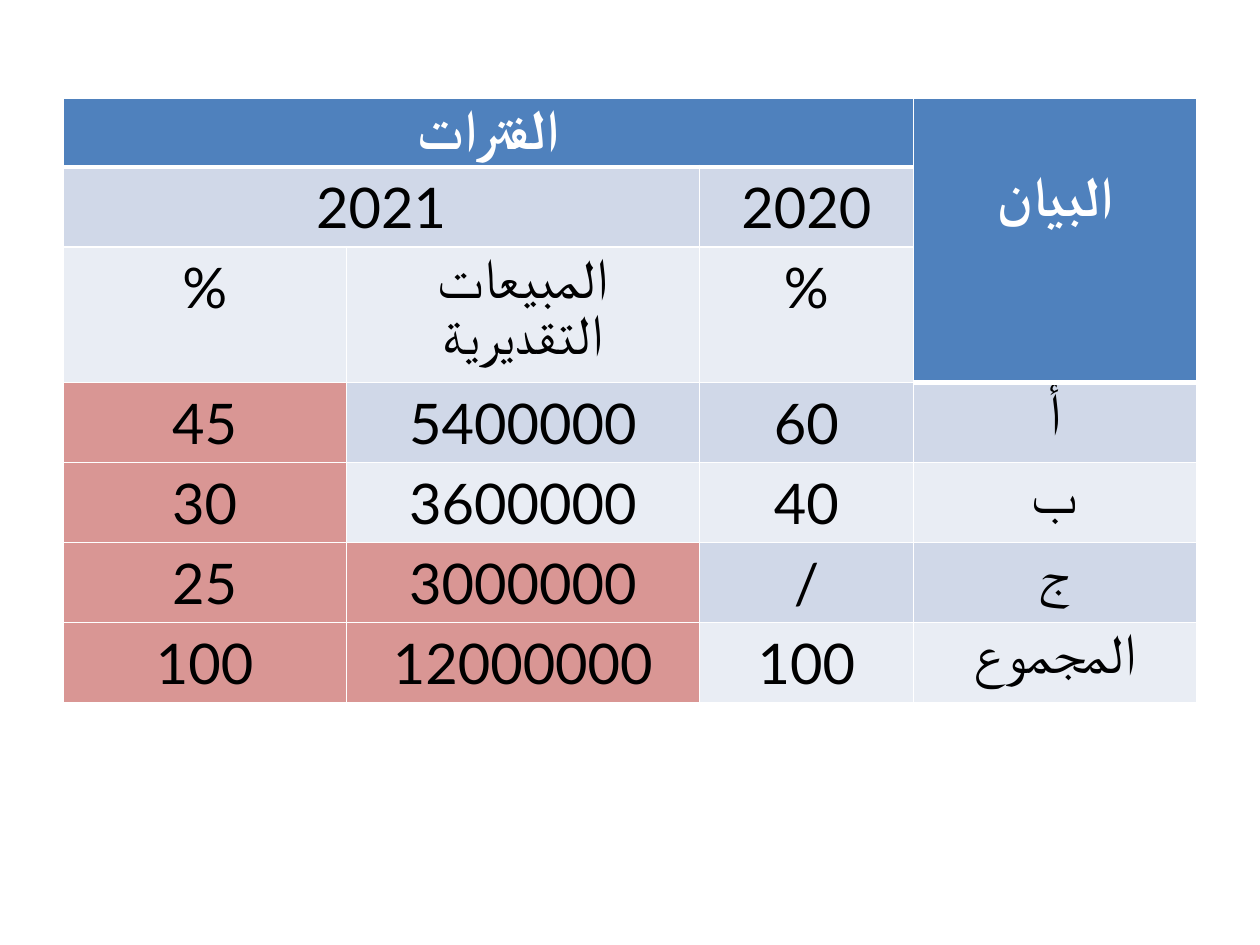
from pptx import Presentation
from pptx.dml.color import RGBColor
from pptx.enum import text
from pptx.oxml import parse_xml
from pptx.oxml.ns import nsdecls
from pptx.util import Inches, Pt

# Content: None marks a cell covered by a span
ROWS = [
    ["الفترات", None, None, "البيان"],
    ["2021", None, "2020", None],
    ["%", "المبيعات التقديرية", "%", None],
    ["45", "5400000", "60", "أ"],
    ["30", "3600000", "40", "ب"],
    ["25", "3000000", "/", "ج"],
    ["100", "12000000", "100", "المجموع"],
]
SPANS = [((0, 0), (0, 2)), ((0, 3), (2, 3)), ((1, 0), (1, 1))]
RESULTS = {(3, 0), (4, 0), (5, 0), (6, 0), (5, 1), (6, 1)}
WIDTHS = [2.25, 2.8, 1.7, 2.25]
ROW_H = 0.41

THEME = {
    "font": "Lato", "size": 32,
    "head": "4F81BD", "bands": ["E9EDF4", "D0D8E8"], "result": "D99694",
    "light": "FFFFFF", "dark": "000000",
    "thin": 1, "thick": 3,
}


def is_head(row, col):
    return row == 0 or (col == 3 and row < 3)


def write(cell, words, color, bold=False):
    para = cell.text_frame.paragraphs[0]
    para.alignment = text.PP_ALIGN.CENTER
    run = para.add_run()
    run.text = words
    font = run.font
    font.name, font.size, font.bold = THEME["font"], Pt(THEME["size"]), bold
    font.color.rgb = RGBColor.from_string(color)


def paint(cell, color):
    cell.fill.solid()
    cell.fill.fore_color.rgb = RGBColor.from_string(color)


def edge(cell, **widths):
    # Border lines come before the fill in the cell properties
    props = cell._tc.get_or_add_tcPr()
    for spot, (side, width) in enumerate(widths.items()):
        props.insert(spot, parse_xml(
            f'<a:ln{side} {nsdecls("a")} w="{Pt(width)}"><a:solidFill>'
            f'<a:srgbClr val="{THEME["light"]}"/></a:solidFill></a:ln{side}>'))


deck = Presentation()
deck.slide_width, deck.slide_height = Inches(10), Inches(7.5)
slide = deck.slides.add_slide(deck.slide_layouts[6])

# Table grid; rows grow to fit their text
frame = slide.shapes.add_table(len(ROWS), len(WIDTHS), Inches(0.5),
                               Inches(0.78), Inches(9), Inches(4.43))
table = frame.table
for column, width in zip(table.columns, WIDTHS):
    column.width = Inches(width)
for line in table.rows:
    line.height = Inches(ROW_H)
frame.height = Inches(4.43)
for first, last in SPANS:
    table.cell(*first).merge(table.cell(*last))

# Cells
for r, row in enumerate(ROWS):
    for c, words in enumerate(row):
        cell, head = table.cell(r, c), is_head(r, c)
        if head:
            fill = THEME["head"]
        elif (r, c) in RESULTS:
            fill = THEME["result"]
        else:
            fill = THEME["bands"][r % 2]
        paint(cell, fill)
        thin, thick = THEME["thin"], THEME["thick"]
        below = r > 0 and not head and is_head(r - 1, c)
        edge(cell, L=thin, R=thin, T=thick if below else thin,
             B=thick if head else thin)
        if words:
            write(cell, words, THEME["light" if head else "dark"], head)

# The tall heading sits one line down
table.cell(0, 3).margin_top = Inches(0.58)

deck.save("out.pptx")
